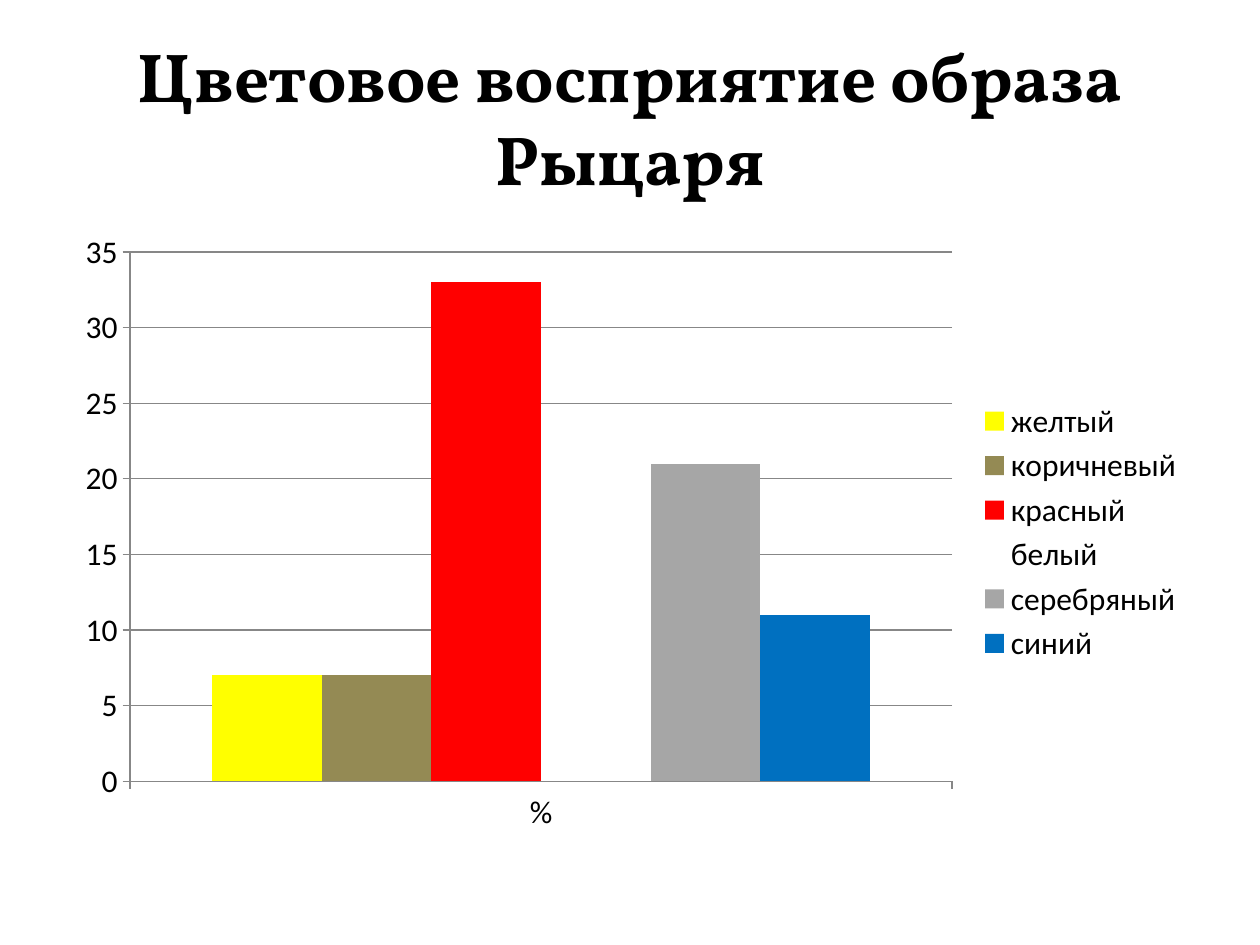
from pptx import Presentation
from pptx.chart.data import CategoryChartData
from pptx.dml.color import RGBColor
from pptx.enum import chart as ch, text as tx
from pptx.util import Pt

COLORS = {
    "text": "000000",
    "axis": "878787",
    "желтый": "FFFF00",
    "коричневый": "948A54",
    "красный": "FF0000",
    "белый": "FFFFFF",
    "серебряный": "A6A6A6",
    "синий": "0070C0",
}
SHARES = {"желтый": 7, "коричневый": 7, "красный": 33,
          "белый": 21, "серебряный": 21, "синий": 11}


def write_text(frame, content, *, font, size, color, bold=False,
               align=tx.PP_ALIGN.CENTER, anchor=tx.MSO_ANCHOR.MIDDLE):
    frame.word_wrap = True
    frame.auto_size = tx.MSO_AUTO_SIZE.NONE
    frame.vertical_anchor = anchor
    paragraph = frame.paragraphs[0]
    paragraph.alignment = align
    run = paragraph.add_run()
    run.text = content
    run.font.name = font
    run.font.size = Pt(size)
    run.font.bold = bold
    run.font.color.rgb = RGBColor.from_string(COLORS[color])


prs = Presentation()
prs.slide_width, prs.slide_height = Pt(720), Pt(540)
slide = prs.slides.add_slide(prs.slide_layouts[5])

heading = slide.shapes.title
heading.left, heading.top, heading.width, heading.height = Pt(36), Pt(21.6), Pt(648), Pt(90)
write_text(heading.text_frame, "Цветовое восприятие образа Рыцаря",
           font="Vollkorn", size=39.6, color="text", bold=True)

shares = CategoryChartData(number_format="General")
shares.categories = ["%"]
for name, share in SHARES.items():
    shares.add_series(name, [share])

color_chart = slide.shapes.add_chart(
    ch.XL_CHART_TYPE.COLUMN_CLUSTERED, Pt(36), Pt(126), Pt(648), Pt(356.4), shares).chart
color_chart.has_title = False
color_chart.font.name = "Calibri"
color_chart.font.size = Pt(18)
color_chart.font.color.rgb = RGBColor.from_string(COLORS["text"])

columns = color_chart.plots[0]
columns.gap_width = 150
columns.overlap = 0
columns.vary_by_categories = False
for series in columns.series:
    series.invert_if_negative = False
    series.format.fill.solid()
    series.format.fill.fore_color.rgb = RGBColor.from_string(COLORS[series.name])

share_axis = color_chart.value_axis
share_axis.minimum_scale, share_axis.maximum_scale, share_axis.major_unit = 0, 35, 5
share_axis.has_major_gridlines = True
for axis in (color_chart.category_axis, share_axis):
    axis.major_tick_mark = ch.XL_TICK_MARK.OUTSIDE
    axis.minor_tick_mark = ch.XL_TICK_MARK.NONE
for part in (color_chart.category_axis, share_axis, share_axis.major_gridlines):
    part.format.line.color.rgb = RGBColor.from_string(COLORS["axis"])
    part.format.line.width = Pt(0.75)

color_chart.has_legend = True
color_chart.legend.position = ch.XL_LEGEND_POSITION.RIGHT
color_chart.legend.include_in_layout = False

prs.save("out.pptx")
